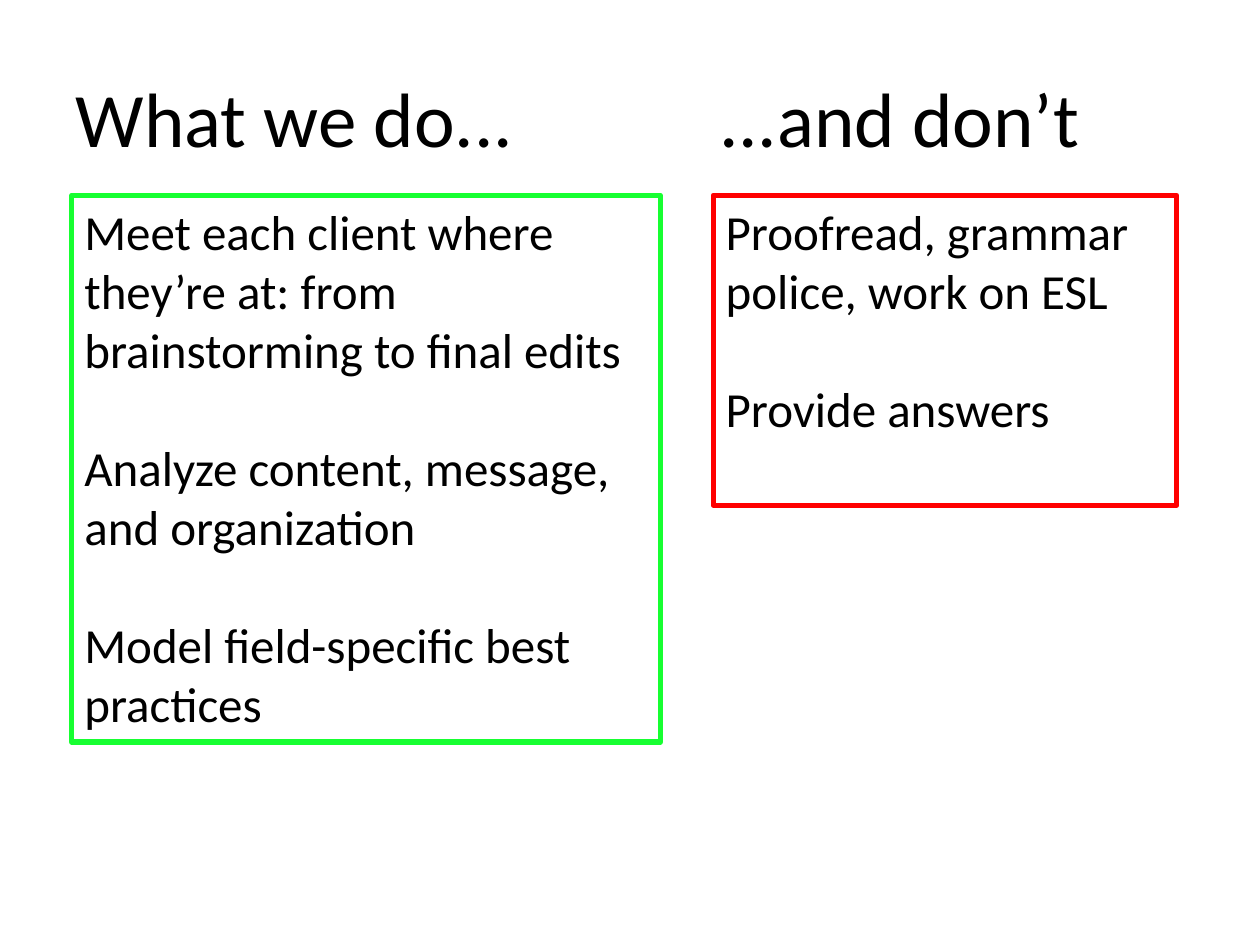
from lxml.etree import SubElement
from pptx import Presentation
from pptx.dml.color import RGBColor
from pptx.enum.text import MSO_ANCHOR, MSO_AUTO_SIZE, PP_ALIGN
from pptx.oxml.ns import qn
from pptx.util import Inches, Pt

COLORS = {"text": "000000", "do": "17FF31", "dont": "FF0000", "paper": "FFFFFF"}
FONT = "Calibri"
BOX_TOP = 1.55
WE_DO = [
    "Meet each client where they’re at: from brainstorming to final edits",
    "Analyze content, message, and organization",
    "Model field-specific best practices",
]
WE_DONT = ["Proofread, grammar police, work on ESL", "Provide answers"]


def color(name):
    """Return the named palette colour."""
    return RGBColor.from_string(COLORS[name])


def place(holder, left, top, width, height):
    """Set position and size in inches."""
    holder.left, holder.top = Inches(left), Inches(top)
    holder.width, holder.height = Inches(width), Inches(height)


def style(paragraph, size):
    """Give a paragraph the left-aligned slide font."""
    paragraph.alignment = PP_ALIGN.LEFT
    paragraph.font.name = FONT
    paragraph.font.size = Pt(size)
    paragraph.font.color.rgb = color("text")


def write_heading(holder, text, wrap=True):
    """Write a column heading."""
    frame = holder.text_frame
    frame.text = text
    frame.word_wrap = wrap
    frame.auto_size = MSO_AUTO_SIZE.NONE
    frame.vertical_anchor = MSO_ANCHOR.MIDDLE
    style(frame.paragraphs[0], 44)


def write_list(holder, items, outline):
    """Write an unbulleted list in an outlined box."""
    holder.line.color.rgb = color(outline)
    holder.line.width = Pt(3)
    frame = holder.text_frame
    frame.text = "\n".join(items)
    frame.auto_size = MSO_AUTO_SIZE.NONE
    frame.vertical_anchor = MSO_ANCHOR.TOP
    for paragraph in frame.paragraphs:
        style(paragraph, 28)
        paragraph.space_before = Pt(0)
        paragraph.space_after = Pt(34)
        properties = paragraph._p.get_or_add_pPr()
        properties.set("marL", "0")
        properties.set("indent", "0")
        SubElement(properties, qn("a:buNone"))


def main():
    """Build and save the slide."""
    deck = Presentation()
    deck.slide_width, deck.slide_height = Inches(10), Inches(7.5)
    slide = deck.slides.add_slide(deck.slide_layouts[3])

    do_heading = slide.shapes.title
    place(do_heading, 0.5, 0.3, 4.53, 1.25)
    write_heading(do_heading, "What we do...")

    do_list, dont_list = slide.placeholders[1], slide.placeholders[2]
    place(do_list, 0.57, BOX_TOP, 4.67, 4.34)
    write_list(do_list, WE_DO, "do")
    place(dont_list, 5.66, BOX_TOP, 3.68, 2.46)
    dont_list.fill.solid()
    dont_list.fill.fore_color.rgb = color("paper")
    write_list(dont_list, WE_DONT, "dont")

    dont_heading = slide.shapes.add_textbox(
        Inches(5.61), Inches(0.51), Inches(3.23), Inches(0.84))
    write_heading(dont_heading, "...and don’t", wrap=False)

    deck.save("out.pptx")


if __name__ == "__main__":
    main()
